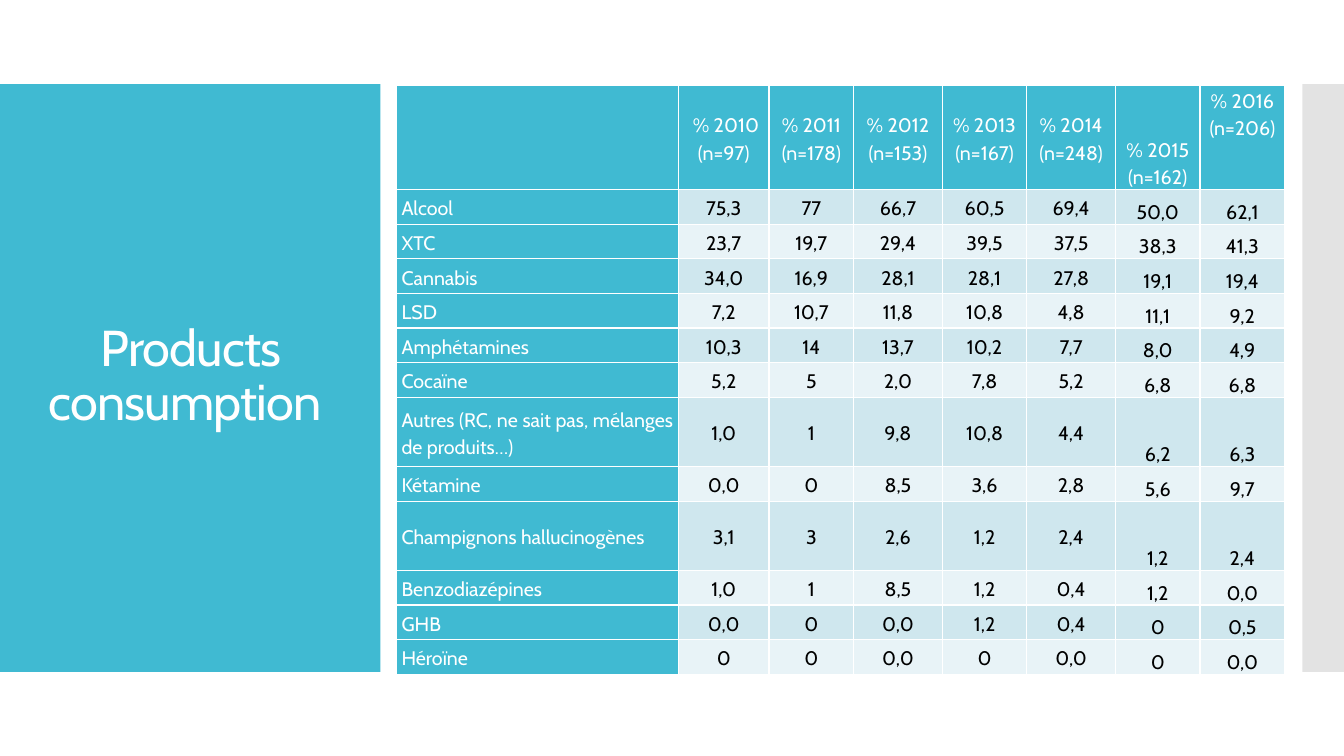
from dataclasses import dataclass

from lxml import etree
from pptx import Presentation
from pptx import util as u
from pptx.dml.color import RGBColor
from pptx.enum import shapes, text
from pptx.oxml import ns
from pptx.slide import Slide
from pptx.table import _Cell as Cell

SLIDE_W, SLIDE_H = u.Inches(13.33), u.Inches(7.5)
MIDDLE, BOTTOM, TOP = text.MSO_ANCHOR.MIDDLE, text.MSO_ANCHOR.BOTTOM, text.MSO_ANCHOR.TOP


@dataclass(frozen=True)
class Theme:
    font: str = "Cabin"
    accent: str = "40BAD2"
    side: str = "C8C8C8"
    bands: tuple[str, str] = ("CFE7EE", "E8F3F7")
    light: str = "FFFFFF"
    dark: str = "000000"
    title_size: int = 36
    table_size: int = 14


@dataclass(frozen=True)
class Box:
    """Place on the slide, as shares of its width and height."""
    x: float
    y: float
    w: float
    h: float

    def emu(self) -> tuple[int, int, int, int]:
        return (round(self.x * SLIDE_W), round(self.y * SLIDE_H),
                round(self.w * SLIDE_W), round(self.h * SLIDE_H))


@dataclass(frozen=True)
class Panel:
    box: Box
    color: str
    opacity: int = 100


@dataclass(frozen=True)
class Product:
    name: str
    shares: str
    height: int = 1


@dataclass(frozen=True)
class Year:
    heading: str
    width: int
    header_anchor: text.MSO_ANCHOR = MIDDLE
    anchor: text.MSO_ANCHOR = MIDDLE


THEME = Theme()
BAND_Y, BAND_H = 1 / 9, 7 / 9
PANELS = [
    Panel(Box(0, BAND_Y, 0.283, BAND_H), THEME.accent),
    Panel(Box(0.969, BAND_Y, 0.031, BAND_H), THEME.side, 50),
]
TITLE_BOX = Box(0.021, 0.164, 0.2415, 0.67)
TABLE_BOX = Box(0.295, 0.1135, 0.661, 0.7785)

# Widths in hundredths of an inch, heights in table rows
NAME_WIDTH, HEADER_HEIGHT = 280, 3
YEARS = [
    Year(" % 2010\n(n=97)", 90),
    Year("% 2011\n(n=178)", 84),
    Year("% 2012\n(n=153)", 88),
    Year("% 2013\n(n=167)", 84),
    Year("% 2014\n(n=248)", 88),
    Year("% 2015\n(n=162)", 84, BOTTOM, BOTTOM),
    Year("% 2016\n(n=206)", 84, TOP, BOTTOM),
]
PRODUCTS = [
    Product("Alcool", "75,3 77 66,7 60,5 69,4 50,0 62,1"),
    Product("XTC", "23,7 19,7 29,4 39,5 37,5 38,3 41,3"),
    Product("Cannabis", "34,0 16,9 28,1 28,1 27,8 19,1 19,4"),
    Product("LSD", "7,2 10,7 11,8 10,8 4,8 11,1 9,2"),
    Product("Amphétamines", "10,3 14 13,7 10,2 7,7 8,0 4,9"),
    Product("Cocaïne", "5,2 5 2,0 7,8 5,2 6,8 6,8"),
    Product("Autres (RC, ne sait pas, mélanges de produits…)",
            "1,0 1 9,8 10,8 4,4 6,2 6,3", 2),
    Product("Kétamine", "0,0 0 8,5 3,6 2,8 5,6 9,7"),
    Product("Champignons hallucinogènes", "3,1 3 2,6 1,2 2,4 1,2 2,4", 2),
    Product("Benzodiazépines", "1,0 1 8,5 1,2 0,4 1,2 0,0"),
    Product("GHB", "0,0 0 0,0 1,2 0,4 0 0,5"),
    Product("Héroïne", "0 0 0,0 0 0,0 0 0,0"),
]


def add_panel(s: Slide, panel: Panel) -> None:
    sp = s.shapes.add_shape(shapes.MSO_SHAPE.RECTANGLE, *panel.box.emu())
    sp.shadow.inherit = False
    sp.line.fill.background()
    sp.fill.solid()
    sp.fill.fore_color.rgb = RGBColor.from_string(panel.color)
    if panel.opacity < 100:
        color = sp._element.spPr.find(".//" + ns.qn("a:srgbClr"))
        etree.SubElement(color, ns.qn("a:alpha"), val=str(panel.opacity * 1000))


def format_runs(p, size: int, color: str) -> None:
    for r in p.runs:
        r.font.name = THEME.font
        r.font.size = u.Pt(size)
        r.font.bold = False
        r.font.color.rgb = RGBColor.from_string(color)


def set_title(s: Slide, wording: str) -> None:
    sp = s.shapes.title
    sp.left, sp.top, sp.width, sp.height = TITLE_BOX.emu()
    tree = sp._element.getparent()
    tree.append(sp._element)  # in front of the panels
    tf = sp.text_frame
    tf.text = wording
    tf.word_wrap = True
    tf.auto_size = text.MSO_AUTO_SIZE.NONE
    tf.vertical_anchor = MIDDLE
    p = tf.paragraphs[0]
    p.alignment = text.PP_ALIGN.CENTER
    p.line_spacing = 0.9
    format_runs(p, THEME.title_size, THEME.light)
    for r in p.runs:
        r.font._element.set("spc", "-60")


def set_borders(cell: Cell) -> None:
    tc_pr = cell._tc.get_or_add_tcPr()
    for side in ("lnL", "lnR", "lnT", "lnB"):
        line = etree.SubElement(tc_pr, ns.qn("a:" + side), w=str(u.Pt(1)))
        fill = etree.SubElement(line, ns.qn("a:solidFill"))
        etree.SubElement(fill, ns.qn("a:srgbClr"), val=THEME.light)


def fill_cell(cell: Cell, wording: str, fill: str, color: str,
              anchor: text.MSO_ANCHOR = MIDDLE,
              align: text.PP_ALIGN = text.PP_ALIGN.CENTER) -> None:
    set_borders(cell)
    cell.fill.solid()
    cell.fill.fore_color.rgb = RGBColor.from_string(fill)
    cell.margin_left = cell.margin_right = u.Inches(0.05)
    cell.margin_top = cell.margin_bottom = 0
    cell.vertical_anchor = anchor
    p = cell.text_frame.paragraphs[0]
    p.text = wording
    p.alignment = align
    p.line_spacing = 1.15
    p.space_before = u.Pt(5)
    format_runs(p, THEME.table_size, color)


def share_out(total: int, parts: list[int]) -> list[int]:
    return [round(total * part / sum(parts)) for part in parts]


def add_consumption_table(s: Slide) -> None:
    box = TABLE_BOX.emu()
    table = s.shapes.add_table(len(PRODUCTS) + 1, len(YEARS) + 1, *box).table
    table.horz_banding = False
    widths = share_out(box[2], [NAME_WIDTH] + [year.width for year in YEARS])
    heights = share_out(box[3], [HEADER_HEIGHT] + [product.height for product in PRODUCTS])
    for column, width in zip(table.columns, widths):
        column.width = width
    for row, height in zip(table.rows, heights):
        row.height = height

    fill_cell(table.cell(0, 0), "", THEME.accent, THEME.light)
    for col, year in enumerate(YEARS, 1):
        fill_cell(table.cell(0, col), year.heading, THEME.accent, THEME.light,
                  year.header_anchor)
    for row, product in enumerate(PRODUCTS, 1):
        fill_cell(table.cell(row, 0), product.name, THEME.accent, THEME.light,
                  align=text.PP_ALIGN.JUSTIFY)
        band = THEME.bands[(row - 1) % 2]
        for col, (year, share) in enumerate(zip(YEARS, product.shares.split()), 1):
            fill_cell(table.cell(row, col), share, band, THEME.dark, year.anchor)


def main() -> None:
    prs = Presentation()
    prs.slide_width, prs.slide_height = SLIDE_W, SLIDE_H
    s = prs.slides.add_slide(prs.slide_layouts.get_by_name("Title Only"))
    for panel in PANELS:
        add_panel(s, panel)
    set_title(s, "Products consumption ")
    add_consumption_table(s)
    prs.save("out.pptx")


if __name__ == "__main__":
    main()
